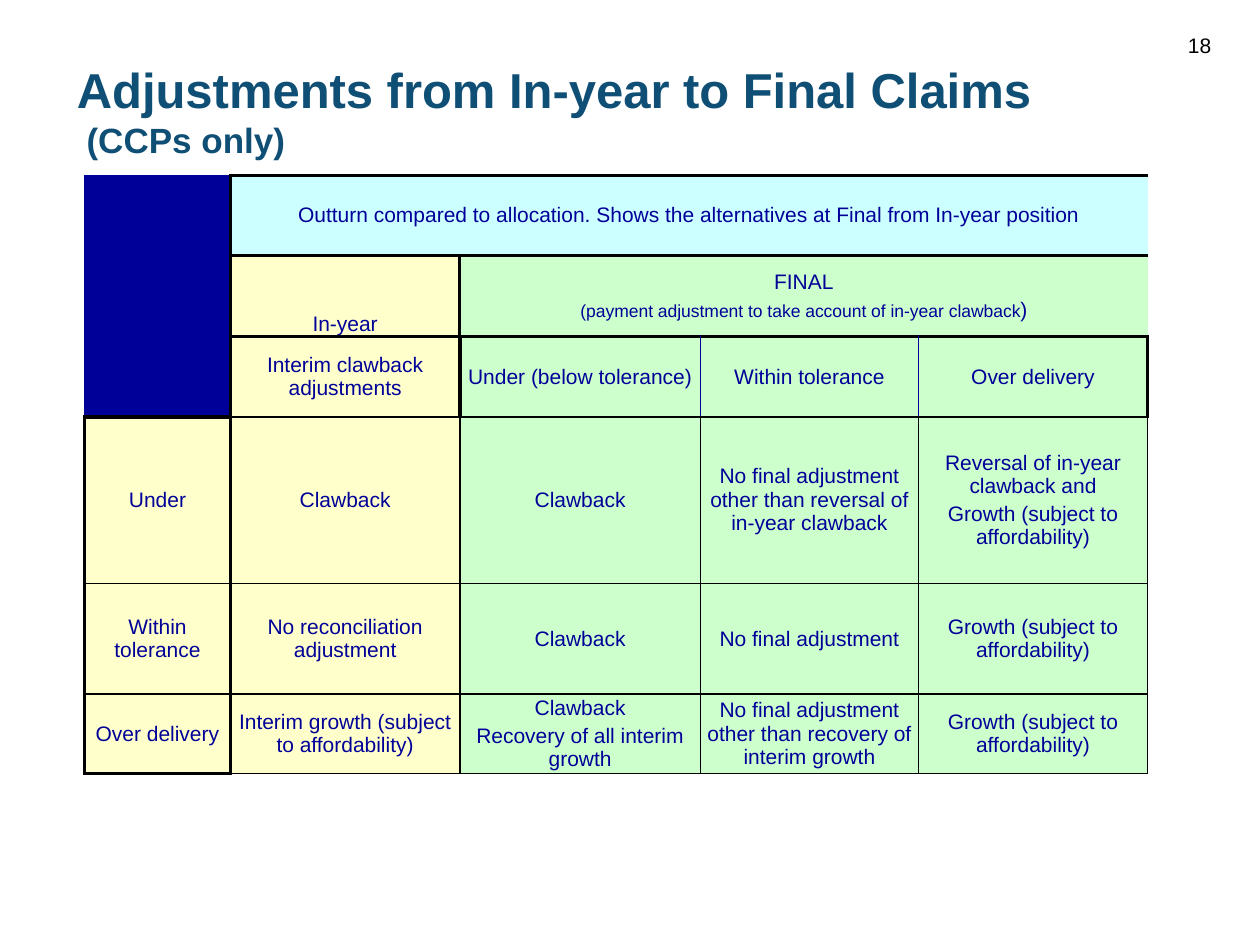
from lxml.etree import SubElement
from pptx import Presentation
from pptx.dml.color import RGBColor
from pptx.enum.text import MSO_ANCHOR as Anchor, PP_ALIGN as Align
from pptx.oxml.ns import qn
from pptx.util import Inches, Pt

NAVY = RGBColor(0x00, 0x00, 0x99)
TEAL = RGBColor(0x10, 0x4F, 0x75)
BLACK = RGBColor(0x00, 0x00, 0x00)
CYAN = RGBColor(0xCC, 0xFF, 0xFF)
CREAM = RGBColor(0xFF, 0xFF, 0xCC)
GREEN = RGBColor(0xCC, 0xFF, 0xCC)

THIN, BLUE = (BLACK, 1), (NAVY, 1)
THICK, HEAVY = (BLACK, 2), (BLACK, 2.25)

COLUMN_WIDTHS = [1.16, 1.82, 1.91, 1.73, 1.82]
ROW_HEIGHTS = [0.64, 0.64, 0.64, 1.32, 0.88, 0.63]
HEADER_ROWS = 3
MERGES = [((0, 1), (0, 4)), ((1, 2), (1, 4))]
FINAL_NOTE = "(payment adjustment to take account of in-year clawback"
GROWTH = "Growth (subject to affordability)"
# Each cell is a list of paragraphs, and each paragraph a list of (text, size).
ROWS = [
    ["", "Outturn compared to allocation. Shows the alternatives at Final "
         "from In-year position", "", "", ""],
    ["", "In-year", ["FINAL", [(FINAL_NOTE, 10), (")", 12)]], "", ""],
    ["", "Interim clawback adjustments", "Under (below tolerance)",
     "Within tolerance", "Over delivery"],
    ["Under", "Clawback", "Clawback",
     "No final adjustment other than reversal of in-year clawback",
     ["Reversal of in-year clawback and", GROWTH]],
    ["Within tolerance", "No reconciliation adjustment", "Clawback",
     "No final adjustment", GROWTH],
    ["Over delivery", "Interim growth (subject to affordability)",
     ["Clawback", "Recovery of all interim growth"],
     "No final adjustment other than recovery of interim growth", GROWTH],
]


def set_values(target, values):
    for name, value in values.items():
        setattr(target, name, value)


def add_run(paragraph, text, size, color, bold=False):
    run = paragraph.add_run()
    run.text = text
    set_values(run.font, {"name": "Arial", "size": Pt(size), "bold": bold})
    run.font.color.rgb = color


def vertical_line(row, edge):
    """Return the line at a column edge, counted from the left, in one row."""
    if edge == 0:
        return None if row < HEADER_ROWS else THICK
    if edge == 1:
        return THICK
    if row < 2:
        inside_merge = edge < 5 and edge > row + 1
        return None if inside_merge else THICK
    if row == 2:
        return HEAVY if edge in (2, 5) else BLUE
    return THIN


def horizontal_line(column, edge):
    """Return the line at a row edge, counted from the top, in one column."""
    if column == 0:
        if edge < HEADER_ROWS:
            return None
        return THICK if edge in (3, 6) else THIN
    if edge == 2 and column > 1:
        return HEAVY
    return THICK if edge <= 2 else THIN


def set_borders(cell, row, column):
    properties = cell._tc.get_or_add_tcPr()
    lines = {
        "a:lnL": vertical_line(row, column),
        "a:lnR": vertical_line(row, column + 1),
        "a:lnT": horizontal_line(column, row),
        "a:lnB": horizontal_line(column, row + 1),
    }
    for tag, line in lines.items():
        element = SubElement(properties, qn(tag))
        if line is None:
            SubElement(element, qn("a:noFill"))
            continue
        color, width = line
        element.set("w", str(Pt(width)))
        fill = SubElement(element, qn("a:solidFill"))
        SubElement(fill, qn("a:srgbClr")).set("val", str(color))


def cell_fill(row, column):
    if column == 0:
        return NAVY if row < HEADER_ROWS else CREAM
    if row == 0:
        return CYAN
    return CREAM if column == 1 else GREEN


def fill_cell(cell, content):
    paragraphs = content if isinstance(content, list) else [content]
    for index, runs in enumerate(paragraphs):
        frame = cell.text_frame
        paragraph = frame.add_paragraph() if index else frame.paragraphs[0]
        paragraph.alignment = Align.CENTER
        if index:
            paragraph.space_before = Pt(2.4)
        for text, size in runs if isinstance(runs, list) else [(runs, 12)]:
            add_run(paragraph, text, size, NAVY)


def add_claims_table(slide, left, top, width, height):
    frame = slide.shapes.add_table(len(ROWS), len(COLUMN_WIDTHS),
                                   left, top, width, height)
    table = frame.table
    set_values(table, {"first_row": False, "horz_banding": False})
    for column, column_width in zip(table.columns, COLUMN_WIDTHS):
        column.width = Inches(column_width)
    for row, row_height in zip(table.rows, ROW_HEIGHTS):
        row.height = Inches(row_height)
    for row, contents in enumerate(ROWS):
        for column, content in enumerate(contents):
            cell = table.cell(row, column)
            set_values(cell, {"margin_left": 0, "margin_right": 0,
                              "margin_top": 0, "margin_bottom": 0,
                              "vertical_anchor": Anchor.MIDDLE})
            set_borders(cell, row, column)
            cell.fill.solid()
            cell.fill.fore_color.rgb = cell_fill(row, column)
            if content:
                fill_cell(cell, content)
    table.cell(1, 1).vertical_anchor = Anchor.BOTTOM
    for first, last in MERGES:
        table.cell(*first).merge(table.cell(*last))


def add_title(slide, left, top, width, height):
    title = slide.shapes.title
    set_values(title, {"left": left, "top": top,
                       "width": width, "height": height})
    title.text_frame.vertical_anchor = Anchor.MIDDLE
    paragraph = title.text_frame.paragraphs[0]
    paragraph.alignment = Align.LEFT
    add_run(paragraph, "Adjustments from In-year to Final Claims", 28, TEAL, True)
    paragraph.add_line_break()
    add_run(paragraph, " (CCPs only)", 20, TEAL, True)


def add_page_number(slide, left, top, width, height):
    box = slide.shapes.add_textbox(left, top, width, height)
    box.text_frame.word_wrap = True
    add_run(box.text_frame.paragraphs[0], "18", 12, BLACK)


def main():
    presentation = Presentation()
    set_values(presentation, {"slide_width": Inches(10),
                              "slide_height": Inches(7.5)})
    slide = presentation.slides.add_slide(presentation.slide_layouts[5])
    add_claims_table(slide, Inches(0.67), Inches(1.39), Inches(8.43), Inches(4.76))
    add_title(slide, Inches(0.51), Inches(0.44), Inches(8.9), Inches(0.87))
    add_page_number(slide, Inches(9.33), Inches(0.21), Inches(0.39), Inches(0.3))
    presentation.save("out.pptx")


if __name__ == "__main__":
    main()
